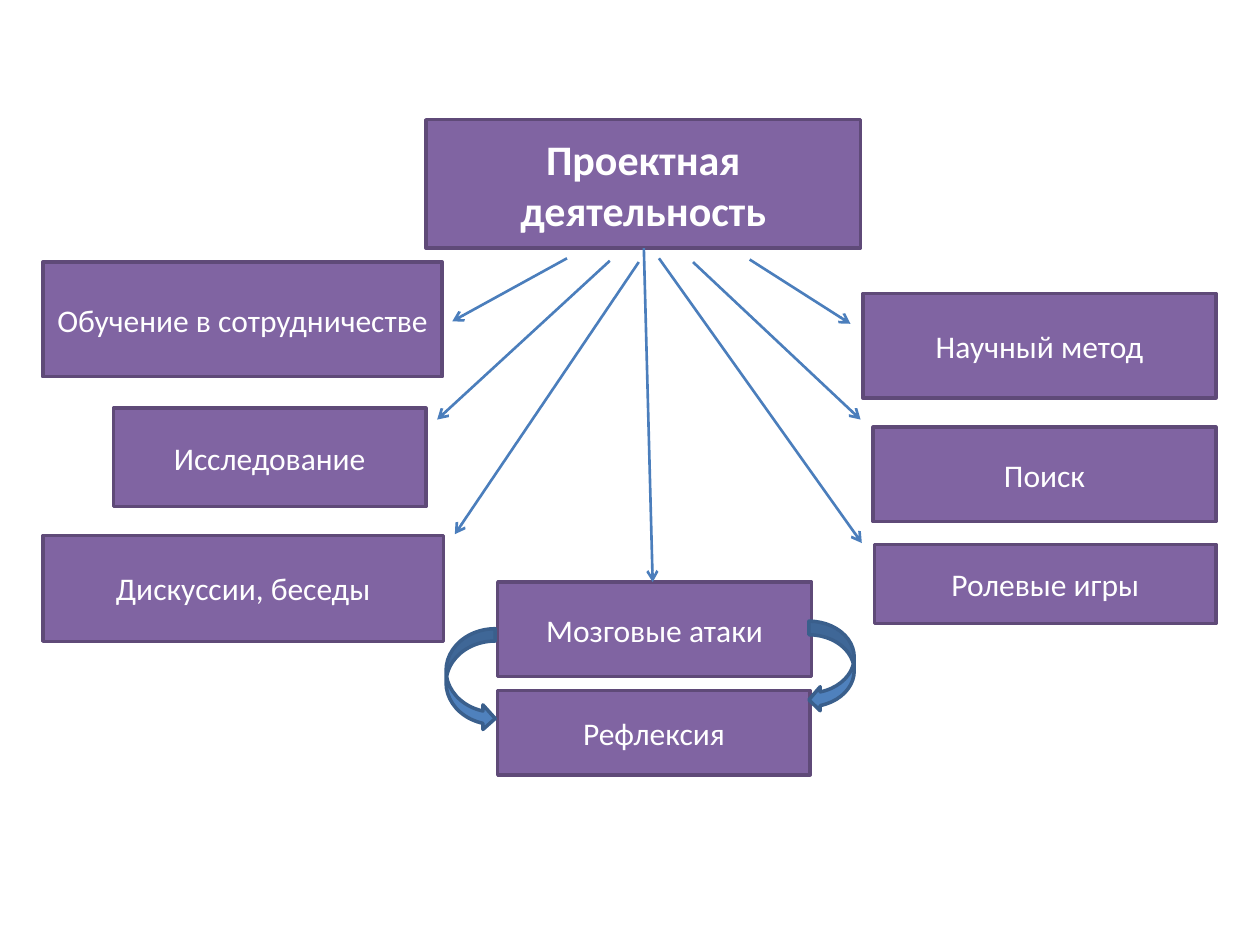
from dataclasses import dataclass

from lxml.etree import SubElement
from pptx import Presentation
from pptx.dml.color import RGBColor
from pptx.enum.shapes import MSO_CONNECTOR, MSO_SHAPE
from pptx.enum.text import MSO_ANCHOR, PP_ALIGN
from pptx.oxml.ns import qn
from pptx.util import Inches, Pt

# The slide is a grid of 100 columns by 75 rows.
COLUMNS, ROWS = 100, 75
WIDTH, HEIGHT = Inches(10), Inches(7.5)


@dataclass(frozen=True)
class Theme:
    font: str = "Calibri"
    text: RGBColor = RGBColor(0xFF, 0xFF, 0xFF)
    box: RGBColor = RGBColor(0x80, 0x64, 0xA2)
    box_line: RGBColor = RGBColor(0x5F, 0x4A, 0x78)
    ray: RGBColor = RGBColor(0x4B, 0x7E, 0xBC)
    loop: RGBColor = RGBColor(0x4F, 0x81, 0xBD)
    loop_line: RGBColor = RGBColor(0x3A, 0x5F, 0x8C)
    title_size: Pt = Pt(24)
    label_size: Pt = Pt(18)
    outline: Pt = Pt(2)
    ray_width: Pt = Pt(1.5)


THEME = Theme()
RIGHT_EDGE = 96.5

TITLE = ("Проектная деятельность", 33.8, 9.5, 34.5, 10.2)
METHODS = [
    ("Обучение в сотрудничестве", 3.4, 20.8, 31.7, 9.1),
    ("Исследование", 9, 32.4, 24.8, 7.8),
    ("Дискуссии, беседы", 3.4, 42.5, 31.8, 8.4),
    ("Мозговые атаки", 39.5, 46.2, 24.9, 7.5),
    ("Рефлексия", 39.5, 54.8, 24.8, 6.7),
]
# Label, left, top and height; all of these end at the right edge.
RIGHT_METHODS = [
    ("Научный метод", 68.5, 23.3, 8.3),
    ("Поиск", 69.3, 33.9, 7.5),
    ("Ролевые игры", 69.4, 43.2, 6.3),
]
RAYS = [
    ((51.1, 19.7), (51.8, 46.2)),
    ((50.7, 20.8), (36.1, 42.4)),
    ((48.4, 20.7), (34.7, 33.3)),
    ((45, 20.5), (35.9, 25.5)),
    ((52.3, 20.5), (68.4, 43.1)),
    ((55, 20.8), (68.3, 33.3)),
    ((59.5, 20.6), (67.5, 25.7)),
]
LOOPS = [
    (MSO_SHAPE.CURVED_RIGHT_ARROW, (35.4, 49.9, 3.9, 8.1), (0.25, 0.5, 0.25)),
    (MSO_SHAPE.CURVED_LEFT_ARROW, (64.2, 49.3, 3.6, 7.2), (0.3, 0.53, 0.25)),
]


def across(columns):
    return round(WIDTH * columns / COLUMNS)


def down(rows):
    return round(HEIGHT * rows / ROWS)


def apply_format(target, values):
    for name, value in values.items():
        setattr(target, name, value)


def add_figure(slide, kind, place, fill, line):
    left, top, width, height = place
    shape = slide.shapes.add_shape(
        kind, across(left), down(top), across(width), down(height))
    shape.shadow.inherit = False
    shape.fill.solid()
    shape.fill.fore_color.rgb = fill
    shape.line.color.rgb = line
    shape.line.width = THEME.outline
    return shape


def add_box(slide, label, *place, size=THEME.label_size, bold=False):
    shape = add_figure(slide, MSO_SHAPE.RECTANGLE, place, THEME.box, THEME.box_line)
    frame = shape.text_frame
    apply_format(frame, {"word_wrap": True, "vertical_anchor": MSO_ANCHOR.MIDDLE})
    paragraph = frame.paragraphs[0]
    paragraph.alignment = PP_ALIGN.CENTER
    run = paragraph.add_run()
    run.text = label
    apply_format(run.font, {"name": THEME.font, "size": size, "bold": bold})
    run.font.color.rgb = THEME.text


def add_ray(slide, start, end):
    """Draw a straight line with an open arrowhead at its end."""
    connector = slide.shapes.add_connector(
        MSO_CONNECTOR.STRAIGHT,
        across(start[0]), down(start[1]), across(end[0]), down(end[1]))
    connector.line.color.rgb = THEME.ray
    connector.line.width = THEME.ray_width
    SubElement(connector.line._get_or_add_ln(), qn("a:tailEnd"), type="arrow")
    SubElement(connector._element.spPr, qn("a:effectLst"))


def add_loop(slide, kind, place, adjustments):
    """Draw a curved block arrow."""
    shape = add_figure(slide, kind, place, THEME.loop, THEME.loop_line)
    for index, value in enumerate(adjustments):
        shape.adjustments[index] = value


def main():
    presentation = Presentation()
    apply_format(presentation, {"slide_width": WIDTH, "slide_height": HEIGHT})
    slide = presentation.slides.add_slide(presentation.slide_layouts[6])

    add_box(slide, *TITLE, size=THEME.title_size, bold=True)
    for method in METHODS:
        add_box(slide, *method)
    for label, left, top, height in RIGHT_METHODS:
        add_box(slide, label, left, top, RIGHT_EDGE - left, height)
    for start, end in RAYS:
        add_ray(slide, start, end)
    for loop in LOOPS:
        add_loop(slide, *loop)

    presentation.save("out.pptx")


if __name__ == "__main__":
    main()
